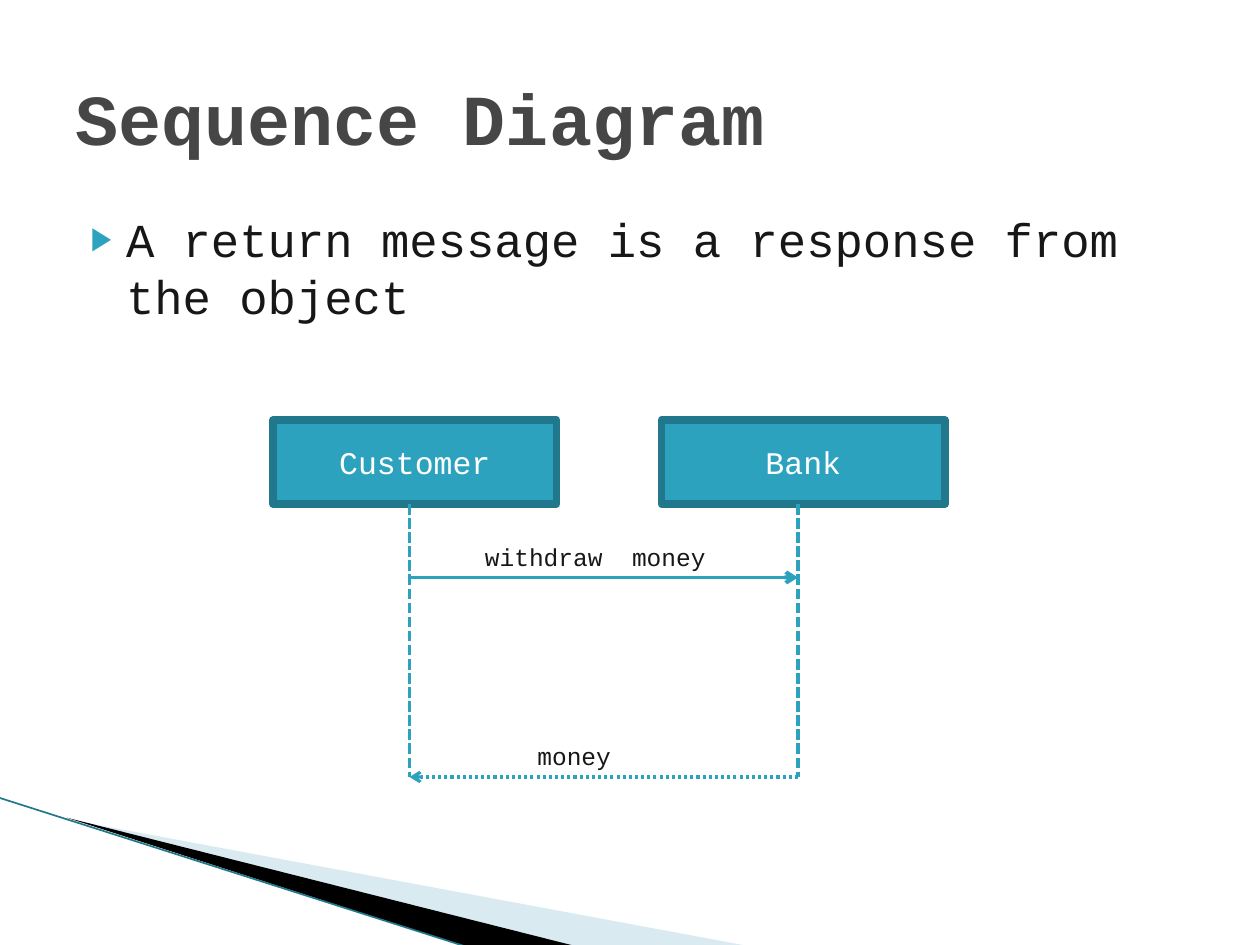
from dataclasses import dataclass

from lxml import etree
from pptx import Presentation
from pptx import util as u
from pptx.dml import color
from pptx.enum import dml, shapes, text
from pptx.oxml import ns


@dataclass(frozen=True)
class Theme:
    font: str = "Courier New"
    title: str = "464646"
    ink: str = "171717"
    accent: str = "2DA2BF"
    border: str = "21788D"
    white: str = "FFFFFF"
    black: str = "000000"
    pale: str = "A0CBDC"
    title_size: float = 41
    body_size: float = 27
    box_size: float = 18
    label_size: float = 14


THEME = Theme()
LIFELINE_TOP = 288
LIFELINE_BOTTOM = 444
CUSTOMER_X = 234
BANK_X = 456


def rgb(value):
    return color.RGBColor.from_string(value)


def add_xml(parent, tag, **attributes):
    return etree.SubElement(parent, ns.qn(tag), attributes)


def place(shape, left, top, width, height):
    shape.left, shape.top = u.Pt(left), u.Pt(top)
    shape.width, shape.height = u.Pt(width), u.Pt(height)


def write(shape, words, size, ink=THEME.ink, bold=False,
          align=text.PP_ALIGN.LEFT, anchor=text.MSO_ANCHOR.TOP):
    frame = shape.text_frame
    frame.word_wrap = True
    frame.auto_size = text.MSO_AUTO_SIZE.NONE
    frame.vertical_anchor = anchor
    paragraph = frame.paragraphs[0]
    paragraph.alignment = align
    paragraph.space_before = u.Pt(0)
    run = paragraph.add_run()
    run.text = words
    run.font.name = THEME.font
    run.font.size = u.Pt(size)
    run.font.bold = bold
    run.font.color.rgb = rgb(ink)
    return paragraph


def add_bullet(paragraph):
    properties = paragraph._p.get_or_add_pPr()
    properties.set("marL", str(u.Pt(28.8)))
    properties.set("indent", str(u.Pt(-20.16)))
    bullet_color = add_xml(properties, "a:buClr")
    add_xml(bullet_color, "a:srgbClr", val=THEME.accent)
    add_xml(properties, "a:buSzPct", val="68000")
    add_xml(properties, "a:buChar", char="▶")


def add_wedge(slide, points, fill, opacity=100):
    corners = [(u.Pt(x), u.Pt(y)) for x, y in points]
    builder = slide.shapes.build_freeform(*corners[0])
    builder.add_line_segments(corners[1:])
    shape = builder.convert_to_shape()
    shape.shadow.inherit = False
    shape.fill.solid()
    shape.fill.fore_color.rgb = rgb(fill)
    shape.line.fill.background()
    if opacity < 100:
        fill_color = shape._element.spPr.find(".//" + ns.qn("a:srgbClr"))
        add_xml(fill_color, "a:alpha", val=str(opacity * 1000))


def add_line(slide, start, end, width, ink=THEME.accent, dash=None, arrow=False):
    ends = [u.Pt(value) for value in (*start, *end)]
    connector = slide.shapes.add_connector(shapes.MSO_CONNECTOR.STRAIGHT, *ends)
    connector.line.width = u.Pt(width)
    connector.line.color.rgb = rgb(ink)
    if dash:
        connector.line.dash_style = dash
    if arrow:
        add_xml(connector.line._get_or_add_ln(), "a:tailEnd", type="arrow")
    add_xml(connector._element.spPr, "a:effectLst")


def add_participant(slide, name, left, lifeline_x):
    box = slide.shapes.add_shape(shapes.MSO_SHAPE.RECTANGLE,
                                 u.Pt(left), u.Pt(240), u.Pt(162), u.Pt(48))
    box.shadow.inherit = False
    box.fill.solid()
    box.fill.fore_color.rgb = rgb(THEME.accent)
    box.line.color.rgb = rgb(THEME.border)
    box.line.width = u.Pt(4.33)
    write(box, name, THEME.box_size, ink=THEME.white,
          align=text.PP_ALIGN.CENTER, anchor=text.MSO_ANCHOR.MIDDLE)
    add_line(slide, (lifeline_x, LIFELINE_TOP), (lifeline_x, LIFELINE_BOTTOM), 2,
             dash=dml.MSO_LINE.SQUARE_DOT)


def add_message(slide, words, label_left, start_x, end_x, y, width, dash=None):
    add_line(slide, (start_x, y), (end_x, y), width, dash=dash, arrow=True)
    label = slide.shapes.add_textbox(u.Pt(label_left), u.Pt(y - 24), u.Pt(168), u.Pt(24))
    write(label, words, THEME.label_size)


def add_decoration(slide):
    add_wedge(slide, [(39.6, 468.4), (428.4, 540.7), (328.3, 540.7)], THEME.pale, opacity=40)
    add_wedge(slide, [(38.2, 467.3), (329, 540.7), (267.8, 541.4)], THEME.black)
    add_line(slide, (-0.7, 455.8), (267.8, 541.4), 0.95, ink=THEME.border)


def main():
    presentation = Presentation()
    presentation.slide_width, presentation.slide_height = u.Pt(720), u.Pt(540)
    slide = presentation.slides.add_slide(presentation.slide_layouts[1])
    add_decoration(slide)

    title, body = slide.placeholders
    place(title, 36, 21.6, 648, 90)
    write(title, "Sequence Diagram", THEME.title_size, ink=THEME.title, bold=True,
          anchor=text.MSO_ANCHOR.MIDDLE)
    place(body, 36, 116.6, 648, 356.4)
    paragraph = write(body, "A return message is a response from the object", THEME.body_size)
    add_bullet(paragraph)

    add_participant(slide, "Customer", 156, CUSTOMER_X)
    add_participant(slide, "Bank", 378, BANK_X)
    add_message(slide, "withdraw  money", 270, CUSTOMER_X, BANK_X, 330, 2.25)
    add_message(slide, "money", 300, BANK_X, CUSTOMER_X, LIFELINE_BOTTOM, 1.75,
                dash=dml.MSO_LINE.ROUND_DOT)

    presentation.save("out.pptx")


if __name__ == "__main__":
    main()
